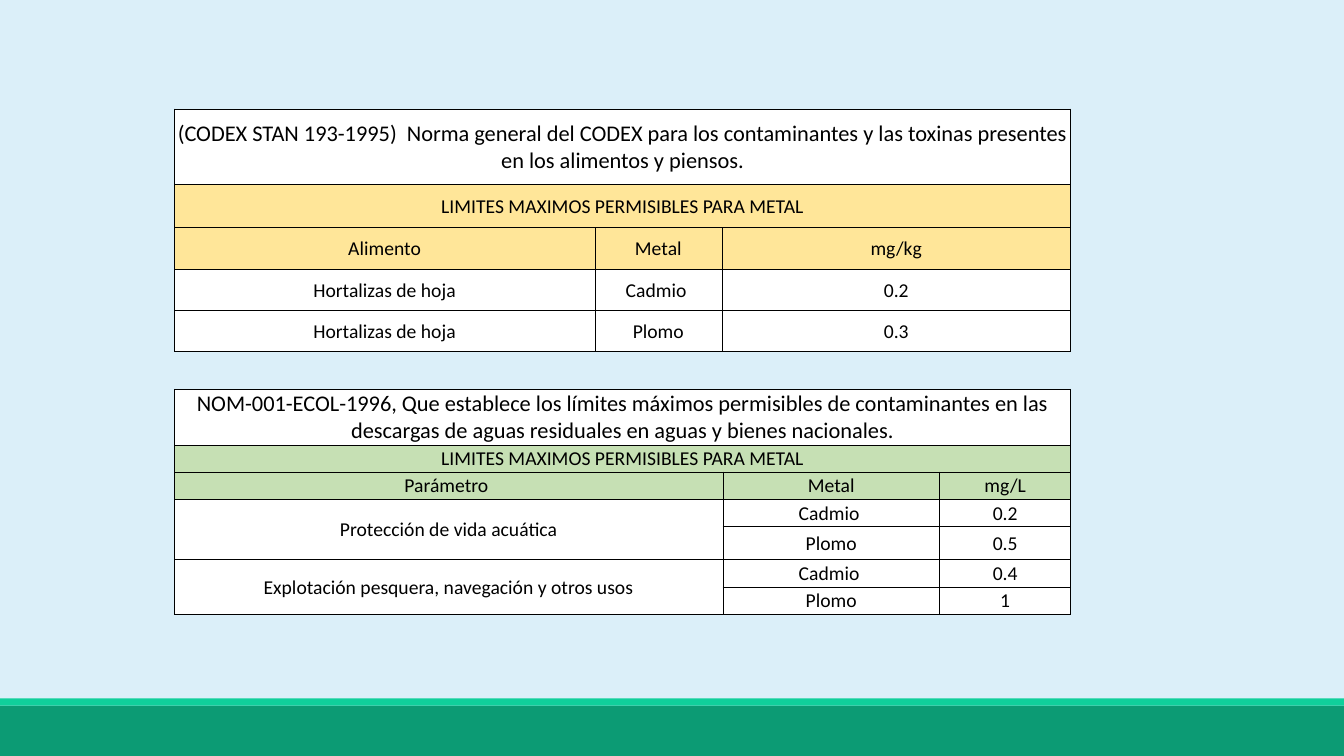
from lxml import etree
from pptx import Presentation
from pptx.dml.color import RGBColor
from pptx.enum import shapes, text
from pptx.oxml import ns
from pptx.util import Inches, Pt

BLACK = RGBColor(0x00, 0x00, 0x00)
WHITE = RGBColor(0xFF, 0xFF, 0xFF)
YELLOW = RGBColor(0xFF, 0xE6, 0x99)
GREEN = RGBColor(0xC6, 0xE0, 0xB4)
SKY = RGBColor(0xDB, 0xEF, 0xF9)
DARK_TEAL = RGBColor(0x0C, 0x9B, 0x74)
BRIGHT_TEAL = RGBColor(0x10, 0xCF, 0x9B)

# Content: None marks a cell covered by a merge
LIMITS_HEADING = "LIMITES MAXIMOS PERMISIBLES PARA METAL"
FOOD_ROWS = [
    ("(CODEX STAN 193-1995)  Norma general del CODEX para los contaminantes "
     "y las toxinas presentes en los alimentos y piensos.", None, None),
    (LIMITS_HEADING, None, None),
    ("Alimento", "Metal", "mg/kg"),
    ("Hortalizas de hoja", "Cadmio ", "0.2"),
    ("Hortalizas de hoja", "Plomo", "0.3"),
]
WATER_ROWS = [
    ("NOM-001-ECOL-1996, Que establece los límites máximos permisibles de "
     "contaminantes en las descargas de aguas residuales en aguas y bienes "
     "nacionales.", None, None),
    (LIMITS_HEADING, None, None),
    ("Parámetro ", "Metal", "mg/L"),
    ("Protección de vida acuática", "Cadmio ", "0.2"),
    (None, "Plomo", "0.5"),
    ("Explotación pesquera, navegación y otros usos", "Cadmio ", "0.4"),
    (None, "Plomo", "1"),
]
TABLES = [
    {"top": 1.08, "rows": FOOD_ROWS, "header": YELLOW,
     "widths": [4.17, 1.26, 3.46], "heights": [0.75, 0.43, 0.41, 0.41, 0.41]},
    {"top": 3.86, "rows": WATER_ROWS, "header": GREEN,
     "widths": [5.44, 2.15, 1.3],
     "heights": [0.49, 0.27, 0.27, 0.27, 0.33, 0.27, 0.27]},
]
BANDS = [(7, 0.5, DARK_TEAL), (6.93, 0.07, BRIGHT_TEAL)]
SLIDE_WIDTH, SLIDE_HEIGHT = 13.33, 7.5
TABLE_LEFT = 1.73


def add_borders(cell):
    properties = cell._tc.get_or_add_tcPr()
    for side in ("a:lnL", "a:lnR", "a:lnT", "a:lnB"):
        line = etree.SubElement(properties, ns.qn(side), w=str(Pt(0.5)))
        fill = etree.SubElement(line, ns.qn("a:solidFill"))
        etree.SubElement(fill, ns.qn("a:srgbClr"), val=str(BLACK))


def format_cell(cell, words, fill, size):
    cell.margin_left = cell.margin_right = cell.margin_top = Inches(0.01)
    cell.margin_bottom = 0
    cell.vertical_anchor = text.MSO_ANCHOR.MIDDLE
    add_borders(cell)
    cell.fill.solid()
    cell.fill.fore_color.rgb = fill
    paragraph = cell.text_frame.paragraphs[0]
    paragraph.alignment = text.PP_ALIGN.CENTER
    paragraph.font.name = "Calibri"
    paragraph.font.size = Pt(size)
    paragraph.font.color.rgb = BLACK
    if words:
        paragraph.add_run().text = words


def add_limits_table(slide, top, rows, header, widths, heights):
    table = slide.shapes.add_table(
        len(rows), len(widths), Inches(TABLE_LEFT), Inches(top),
        Inches(sum(widths)), Inches(sum(heights))).table
    for column, width in zip(table.columns, widths):
        column.width = Inches(width)
    for row, height in zip(table.rows, heights):
        row.height = Inches(height)
    for r, row in enumerate(rows):
        fill = header if r in (1, 2) else WHITE
        for c, words in enumerate(row):
            format_cell(table.cell(r, c), words, fill, 16 if r == 0 else 14)
        if row[1] is None:
            table.cell(r, 0).merge(table.cell(r, len(widths) - 1))
        if row[0] is None:
            table.cell(r - 1, 0).merge(table.cell(r, 0))


def main():
    presentation = Presentation()
    presentation.slide_width = Inches(SLIDE_WIDTH)
    presentation.slide_height = Inches(SLIDE_HEIGHT)
    slide = presentation.slides.add_slide(presentation.slide_layouts[6])
    slide.background.fill.solid()
    slide.background.fill.fore_color.rgb = SKY

    # Footer bands
    for top, height, color in BANDS:
        band = slide.shapes.add_shape(
            shapes.MSO_SHAPE.RECTANGLE, 0, Inches(top),
            Inches(SLIDE_WIDTH), Inches(height))
        band.shadow.inherit = False
        band.fill.solid()
        band.fill.fore_color.rgb = color
        band.line.fill.background()

    # Tables of limits
    for table in TABLES:
        add_limits_table(slide, **table)

    presentation.save("out.pptx")


if __name__ == "__main__":
    main()
